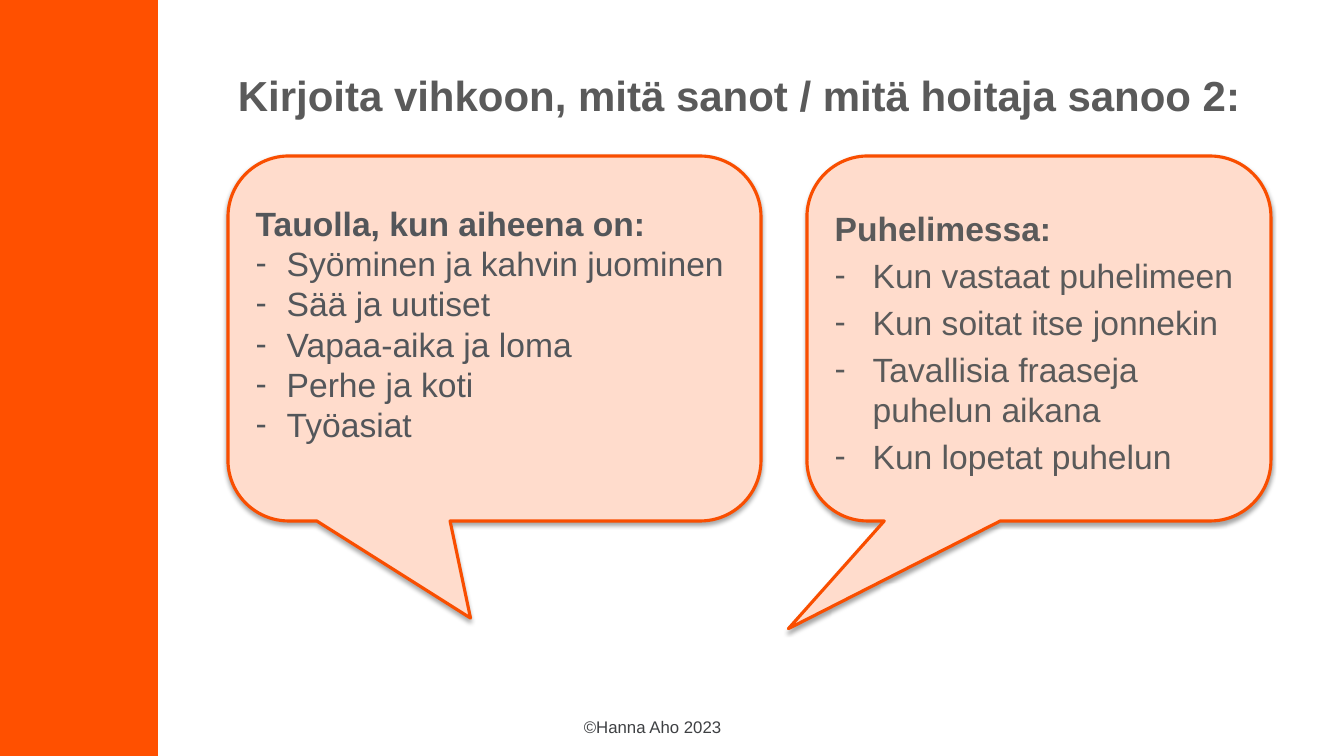
from lxml.etree import SubElement
from pptx import Presentation
from pptx.dml.color import RGBColor
from pptx.enum.shapes import MSO_SHAPE as Preset
from pptx.enum.text import MSO_ANCHOR as Anchor, PP_ALIGN as Align
from pptx.oxml.ns import qn
from pptx.util import Pt

PX = 914400 / 100.8
COLORS = {
    "band": "FF5000", "bubble": "FFDCCC", "outline": "F94E00", "shadow": "000000",
    "title": "5A5A5A", "break": "53565A", "phone": "5A5A5A", "footer": "3E4043",
}
BUBBLES = [
    {"box": (228, 156, 533, 365), "tip": (-0.045, 0.766), "color": "break",
     "indent": 31, "space": 0, "margins": (5, 35),
     "heading": "Tauolla, kun aiheena on:",
     "items": ["Syöminen ja kahvin juominen", "Sää ja uutiset", "Vapaa-aika ja loma",
               "Perhe ja koti", "Työasiat"]},
    {"box": (807, 156, 464, 365), "tip": (-0.54, 0.795), "color": "phone",
     "indent": 38, "space": 4.8, "margins": (12, 5),
     "heading": "Puhelimessa:",
     "items": ["Kun vastaat puhelimeen", "Kun soitat itse jonnekin",
               "Tavallisia fraaseja puhelun aikana", "Kun lopetat puhelun"]},
]


def px(length):
    return round(length * PX)


def rgb(name):
    return RGBColor.from_string(COLORS[name])


def write(paragraph, text, size, color, bold=False):
    paragraph.text = text
    paragraph.alignment = Align.LEFT
    font = paragraph.runs[0].font
    for name, value in {"name": "Arial", "size": Pt(size), "bold": bold}.items():
        setattr(font, name, value)
    font.color.rgb = rgb(color)


def add_dash(paragraph, indent):
    """Give the paragraph a hanging dash bullet."""
    properties = paragraph._p.get_or_add_pPr()
    properties.set("marL", str(px(indent)))
    properties.set("indent", str(-px(indent)))
    SubElement(properties, qn("a:buFont"), typeface="Arial")
    SubElement(properties, qn("a:buChar"), char="-")


def add_soft_shadow(shape):
    shape.shadow.inherit = False
    effects = shape._element.spPr.find(qn("a:effectLst"))
    shadow = SubElement(effects, qn("a:outerShdw"), blurRad="40000", dist="23000",
                        dir="5400000", rotWithShape="0")
    color = SubElement(shadow, qn("a:srgbClr"), val=COLORS["shadow"])
    SubElement(color, qn("a:alpha"), val="35000")


def add_band(slide, box):
    band = slide.shapes.add_shape(Preset.RECTANGLE, *map(px, box))
    band.shadow.inherit = False
    band.fill.solid()
    band.fill.fore_color.rgb = rgb("band")
    band.line.fill.background()


def add_label(slide, box, text, size, color, bold=False, anchor=Anchor.TOP):
    frame = slide.shapes.add_textbox(*map(px, box)).text_frame
    frame.word_wrap = True
    frame.vertical_anchor = anchor
    write(frame.paragraphs[0], text, size, color, bold)


def add_bubble(slide, box, tip, color, indent, space, margins, heading, items):
    bubble = slide.shapes.add_shape(Preset.ROUNDED_RECTANGULAR_CALLOUT, *map(px, box))
    for index, value in enumerate((*tip, 0.16667)):
        bubble.adjustments[index] = value
    bubble.fill.solid()
    bubble.fill.fore_color.rgb = rgb("bubble")
    bubble.line.color.rgb = rgb("outline")
    bubble.line.width = Pt(2.25)
    add_soft_shadow(bubble)

    frame = bubble.text_frame
    frame.word_wrap = True
    frame.vertical_anchor = Anchor.MIDDLE
    frame.margin_top, frame.margin_bottom = map(px, margins)
    write(frame.paragraphs[0], heading, 24, color, bold=True)
    for item in items:
        paragraph = frame.add_paragraph()
        paragraph.space_before = Pt(space)
        add_dash(paragraph, indent)
        write(paragraph, item, 24, color)


def main():
    presentation = Presentation()
    presentation.slide_width, presentation.slide_height = px(1344), px(756)
    slide = presentation.slides.add_slide(presentation.slide_layouts[6])
    add_band(slide, (0, 0, 158, 756))
    add_label(slide, (228, 59, 1077, 66),
              "Kirjoita vihkoon, mitä sanot / mitä hoitaja sanoo 2:",
              30, "title", bold=True, anchor=Anchor.BOTTOM)
    for bubble in BUBBLES:
        add_bubble(slide, **bubble)
    add_label(slide, (574, 712, 197, 30), "©Hanna Aho 2023", 12, "footer")
    presentation.save("out.pptx")


if __name__ == "__main__":
    main()
